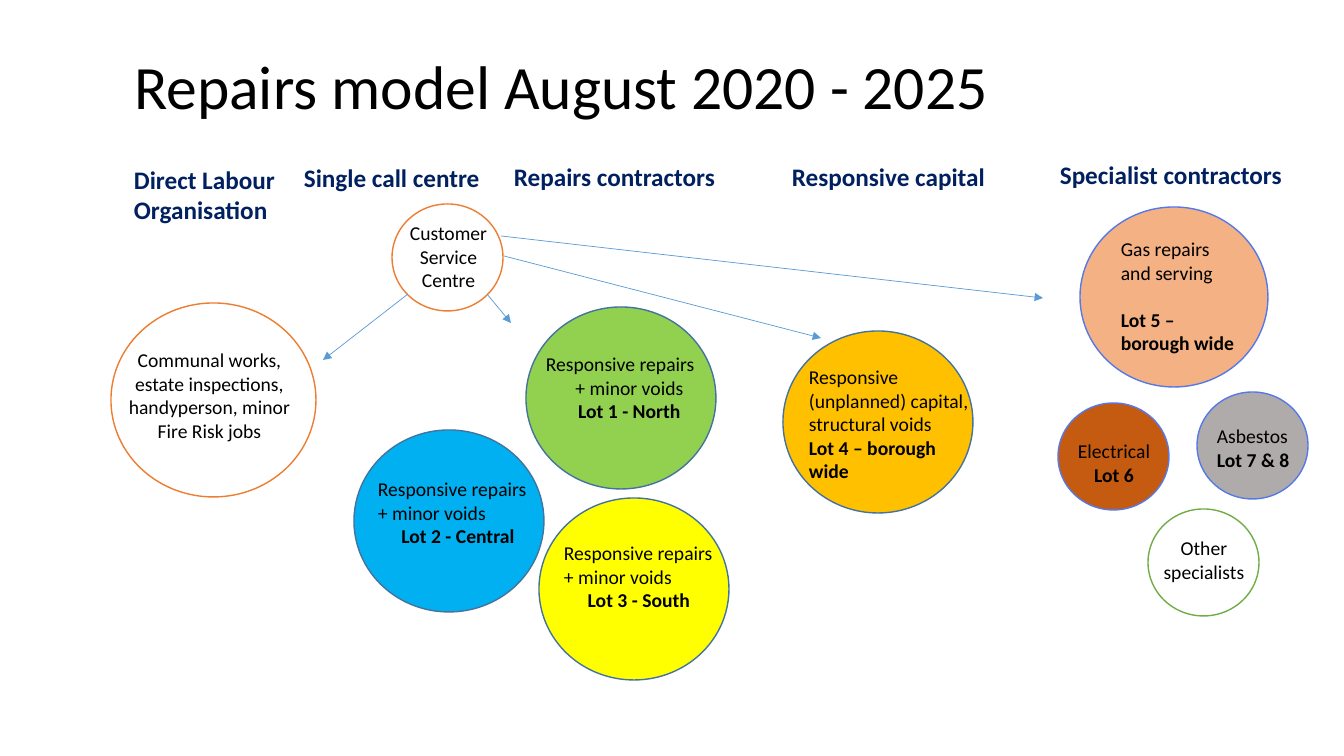
from lxml import etree
from pptx import Presentation
from pptx.dml.color import RGBColor
from pptx.enum.shapes import MSO_CONNECTOR, MSO_SHAPE
from pptx.enum.text import MSO_ANCHOR, MSO_AUTO_SIZE, PP_ALIGN
from pptx.oxml.ns import qn
from pptx.util import Emu, Pt

SLIDE_SIZE = (1344, 756)
EMU_PER_PX = 12192000 / 1344
LEFT, CENTER = PP_ALIGN.LEFT, PP_ALIGN.CENTER

TITLE = ("Repairs model August 2020 - 2025", (124, 43, 896, 85))

HEADINGS = [
    (["Direct Labour", "Organisation"], (124, 159, 168, 72)),
    (["Single call centre"], (294, 157, 198, 40)),
    (["Repairs contractors"], (504, 156, 223, 40)),
    (["Responsive capital"], (782, 156, 215, 40)),
    (["Specialist contractors"], (1050, 154, 244, 40)),
]

# Circle sizes, shared by the circles of one group
LOT, SMALL, GAS, DIRECT = (190, 182), (111, 107), (188, 180), (205, 194)

# left, top, size, fill, line
CIRCLES = [
    (526, 307, LOT, "92D050", "43739E"),
    (354, 430, LOT, "00B0F0", "43739E"),
    (783, 331, LOT, "FFC000", "43739E"),
    (539, 498, LOT, "FFFF00", "43739E"),
    (1080, 207, GAS, "F4B183", "5779E7"),
    (1058, 403, SMALL, "C55A11", "5779E7"),
    (1197, 392, SMALL, "AFABAB", "5779E7"),
    (1148, 509, SMALL, None, "70AD47"),
    (111, 303, DIRECT, None, "ED7D31"),
    (392, 204, SMALL, None, "ED7D31"),
]

# box, wraps, lines of (text, alignment, bold, points before)
LABELS = [
    ((399, 216, 99, 82), False, [
        ("Customer", CENTER, False, 0),
        ("Service", CENTER, False, 0),
        ("Centre", CENTER, False, 0)]),
    ((116, 343, 187, 105), True, [
        ("Communal works, estate inspections,", CENTER, False, 0),
        ("handyperson, minor Fire Risk jobs", CENTER, False, 0)]),
    ((536, 347, 187, 105), True, [
        ("Responsive repairs", LEFT, False, 0),
        ("+ minor voids", CENTER, False, 0),
        ("Lot 1 - North", CENTER, True, 0)]),
    ((368, 472, 180, 82), True, [
        ("Responsive repairs + minor voids", LEFT, False, 0),
        ("Lot 2 - Central", CENTER, True, 0)]),
    ((554, 536, 170, 82), True, [
        ("Responsive repairs + minor voids", LEFT, False, 0),
        ("Lot 3 - South", CENTER, True, 0)]),
    ((799, 360, 187, 152), True, [
        ("Responsive (unplanned) capital, structural voids", LEFT, False, 0),
        ("Lot 4 – borough wide", LEFT, True, 0)]),
    ((1111, 232, 142, 129), True, [
        ("Gas repairs and serving", LEFT, False, 0),
        ("Lot 5 – borough wide", LEFT, True, 17)]),
    ((1067, 434, 94, 57), False, [
        ("Electrical", CENTER, False, 0),
        ("Lot 6", CENTER, True, 0)]),
    ((1207, 419, 94, 57), False, [
        ("Asbestos", LEFT, False, 0),
        ("Lot 7 & 8", LEFT, True, 0)]),
    ((1153, 531, 102, 57), False, [
        ("Other", CENTER, False, 0),
        ("specialists", CENTER, False, 0)]),
]

# Arrows out of the call centre: from, to
ARROWS = [
    ((408, 294), (323, 360)),
    ((487, 294), (511, 323)),
    ((504, 256), (821, 338)),
    ((501, 236), (1043, 298)),
]


def emu(*lengths):
    return [Emu(round(length * EMU_PER_PX)) for length in lengths]


def rgb(colour):
    return RGBColor.from_string(colour)


def set_all(target, formats):
    for attribute, value in formats.items():
        setattr(target, attribute, value)


def write_lines(frame, lines, size, colour):
    for index, (text, alignment, bold, before) in enumerate(lines):
        paragraph = frame.paragraphs[0] if index == 0 else frame.add_paragraph()
        paragraph.alignment = alignment
        if before:
            paragraph.space_before = Pt(before)
        run = paragraph.add_run()
        run.text = text
        set_all(run.font, {"name": "Calibri", "size": Pt(size), "bold": bold})
        run.font.color.rgb = rgb(colour)


def add_text(slide, box, wraps, lines, size, colour):
    frame = slide.shapes.add_textbox(*emu(*box)).text_frame
    set_all(frame, {"word_wrap": wraps,
                    "auto_size": MSO_AUTO_SIZE.SHAPE_TO_FIT_TEXT})
    write_lines(frame, lines, size, colour)


def add_title(slide, text, box):
    title = slide.shapes.title
    set_all(title, dict(zip(("left", "top", "width", "height"), emu(*box))))
    set_all(title.text_frame, {"word_wrap": False,
                               "auto_size": MSO_AUTO_SIZE.NONE,
                               "vertical_anchor": MSO_ANCHOR.TOP})
    write_lines(title.text_frame, [(text, LEFT, False, 0)], 44, "000000")


def add_circle(slide, left, top, size, fill, line):
    circle = slide.shapes.add_shape(MSO_SHAPE.OVAL, *emu(left, top, *size))
    circle.shadow.inherit = False
    if fill:
        circle.fill.solid()
        circle.fill.fore_color.rgb = rgb(fill)
    else:
        circle.fill.background()
    circle.line.color.rgb = rgb(line)
    circle.line.width = Pt(1)


def add_arrow(slide, start, end):
    arrow = slide.shapes.add_connector(MSO_CONNECTOR.STRAIGHT, *emu(*start, *end))
    arrow.line.color.rgb = rgb("5B9BD5")
    arrow.line.width = Pt(0.5)
    etree.SubElement(arrow.line._get_or_add_ln(), qn("a:tailEnd"), type="triangle")
    etree.SubElement(arrow._element.spPr, qn("a:effectLst"))


def main():
    deck = Presentation()
    deck.slide_width, deck.slide_height = emu(*SLIDE_SIZE)
    slide = deck.slides.add_slide(deck.slide_layouts[5])
    add_title(slide, *TITLE)
    for circle in CIRCLES:
        add_circle(slide, *circle)
    for names, box in HEADINGS:
        lines = [(name, LEFT, True, 0) for name in names]
        add_text(slide, box, False, lines, 18, "002060")
    for box, wraps, lines in LABELS:
        add_text(slide, box, wraps, lines, 14, "000000")
    for start, end in ARROWS:
        add_arrow(slide, start, end)
    deck.save("out.pptx")


if __name__ == "__main__":
    main()
